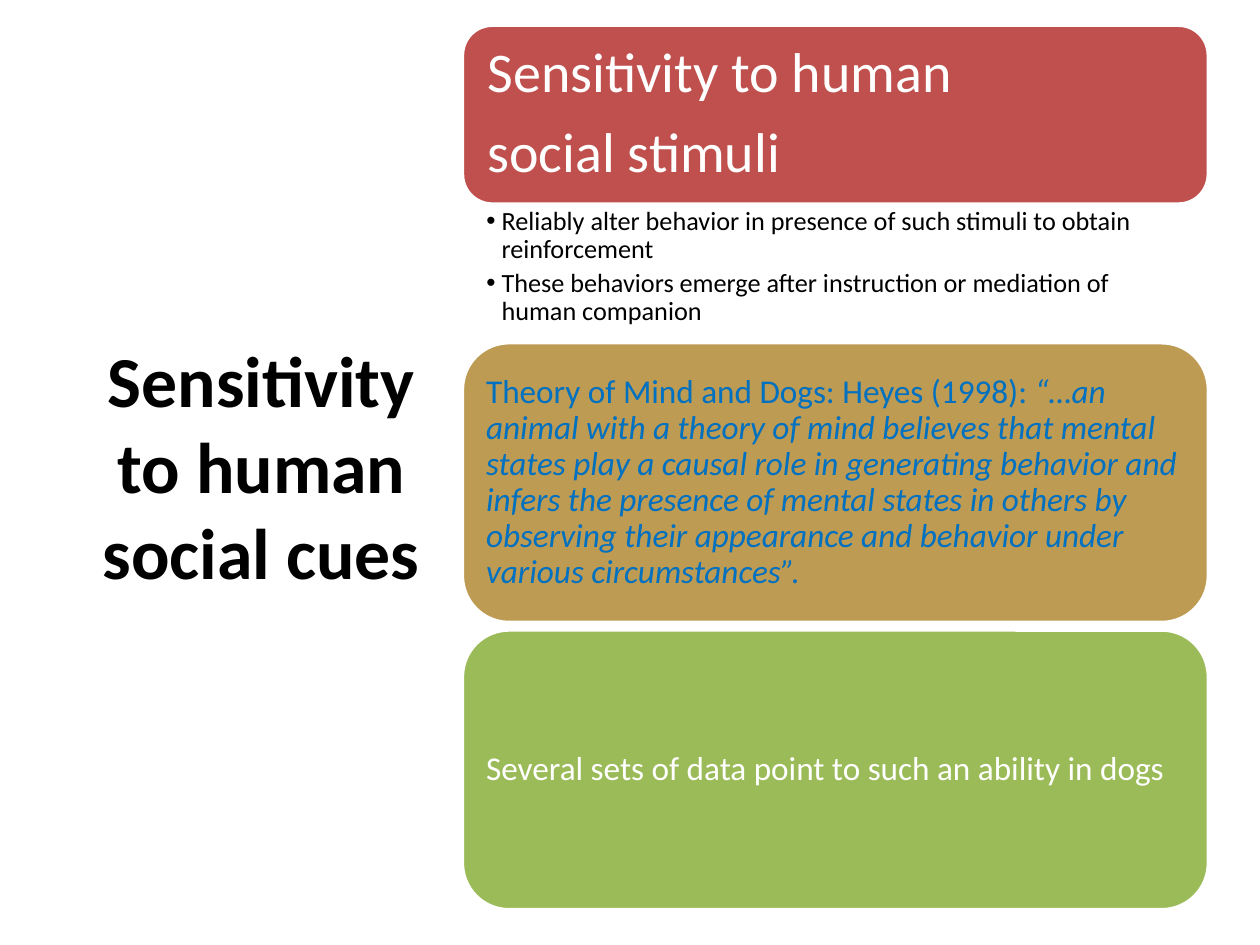
from pptx import Presentation
from pptx.dml.color import RGBColor
from pptx.enum.shapes import MSO_SHAPE
from pptx.enum.text import MSO_ANCHOR, MSO_AUTO_SIZE, PP_ALIGN
from pptx.util import Inches, Pt

ROUND = MSO_SHAPE.ROUNDED_RECTANGLE
MIDDLE, TOP = MSO_ANCHOR.MIDDLE, MSO_ANCHOR.TOP
LEFT, CENTER = PP_ALIGN.LEFT, PP_ALIGN.CENTER
FIXED = MSO_AUTO_SIZE.NONE

COLORS = {
    "red": "C0504D", "tan": "BD9B53", "green": "9BBB59",
    "blue": "0070C0", "white": "FFFFFF", "black": "000000",
}
FONT = "Calibri"

# Right-hand column: one stack of rows, heights in inches
COL_X, COL_W, STACK_Y = 3.67, 5.92, 0.2
HEAD_H, LIST_H, CARD_H, GAP = 1.42, 1.1, 2.22, 0.06


def rgb(name):
    return RGBColor.from_string(COLORS[name])


def place(shape, box):
    shape.left, shape.top, shape.width, shape.height = map(Inches, box)


def fill_text(shape, paras, size, color, anchor, pads, after=0.0, align=LEFT):
    """Write paragraphs, each a list of (text, italic) runs; after is a share of size."""
    frame = shape.text_frame
    frame.word_wrap = True
    frame.auto_size = FIXED
    frame.vertical_anchor = anchor
    (frame.margin_left, frame.margin_top,
     frame.margin_right, frame.margin_bottom) = map(Inches, pads)
    for i, runs in enumerate(paras):
        para = frame.paragraphs[0] if i == 0 else frame.add_paragraph()
        para.alignment = align
        para.space_before = Pt(0)
        para.space_after = Pt(size * after)
        para.line_spacing = 0.9 if after else 1.0
        para.font.name, para.font.size = FONT, Pt(size)
        para.font.color.rgb = rgb(color)
        for text, slant in runs:
            run = para.add_run()
            run.text = text
            if slant:
                run.font.italic = True


def add_title(slide, box, text):
    title = slide.shapes.title
    place(title, box)
    fill_text(title, [[(text, False)]], 41, "black", MIDDLE,
              (0.1, 0.05, 0.1, 0.05), align=CENTER)
    title.text_frame.paragraphs[0].font.bold = True


def add_card(slide, box, fill, paras, size, color, pad):
    card = slide.shapes.add_shape(ROUND, *map(Inches, box))
    card.shadow.inherit = False
    card.fill.solid()
    card.fill.fore_color.rgb = rgb(fill)
    card.line.color.rgb = rgb("white")
    card.line.width = Pt(2)
    fill_text(card, paras, size, color, MIDDLE, (pad,) * 4, after=0.35)


def add_list(slide, box, items):
    body = slide.placeholders[1]
    place(body, box)
    fill_text(body, [[(item, False)] for item in items], 15, "black", TOP,
              (0.19, 0.03, 0.15, 0.03), after=0.2)
    for para in body.text_frame.paragraphs:
        props = para._p.get_or_add_pPr()
        props.set("marL", str(Inches(0.12)))
        props.set("indent", str(-Inches(0.12)))


def main():
    deck = Presentation()
    deck.slide_width, deck.slide_height = Inches(10), Inches(7.5)
    slide = deck.slides.add_slide(deck.slide_layouts[1])

    list_y = STACK_Y + HEAD_H
    quote_y = list_y + LIST_H
    data_y = quote_y + CARD_H + GAP

    add_title(slide, (0.69, 0.68, 2.77, 6.02), "Sensitivity to human social cues")
    add_card(slide, (COL_X, STACK_Y, COL_W, HEAD_H), "red",
             [[("Sensitivity to human", False)], [("social stimuli", False)]],
             32, "white", 0.13)
    add_list(slide, (COL_X, list_y, COL_W, LIST_H), [
        "Reliably alter behavior in presence of such stimuli to obtain reinforcement",
        "These behaviors emerge after instruction or mediation of human companion",
    ])
    add_card(slide, (COL_X, quote_y, COL_W, CARD_H), "tan", [[
        ("Theory of Mind and Dogs: Heyes (1998): ", False),
        ("“…an animal with a theory of mind believes that mental states play "
         "a causal role in generating behavior and infers the presence of "
         "mental states in others by observing their appearance and behavior "
         "under various circumstances”.", True),
    ]], 19, "blue", 0.08)
    add_card(slide, (COL_X, data_y, COL_W, CARD_H), "green",
             [[("Several sets of data point to such an ability in dogs", False)]],
             19, "white", 0.08)
    deck.save("out.pptx")


if __name__ == "__main__":
    main()
